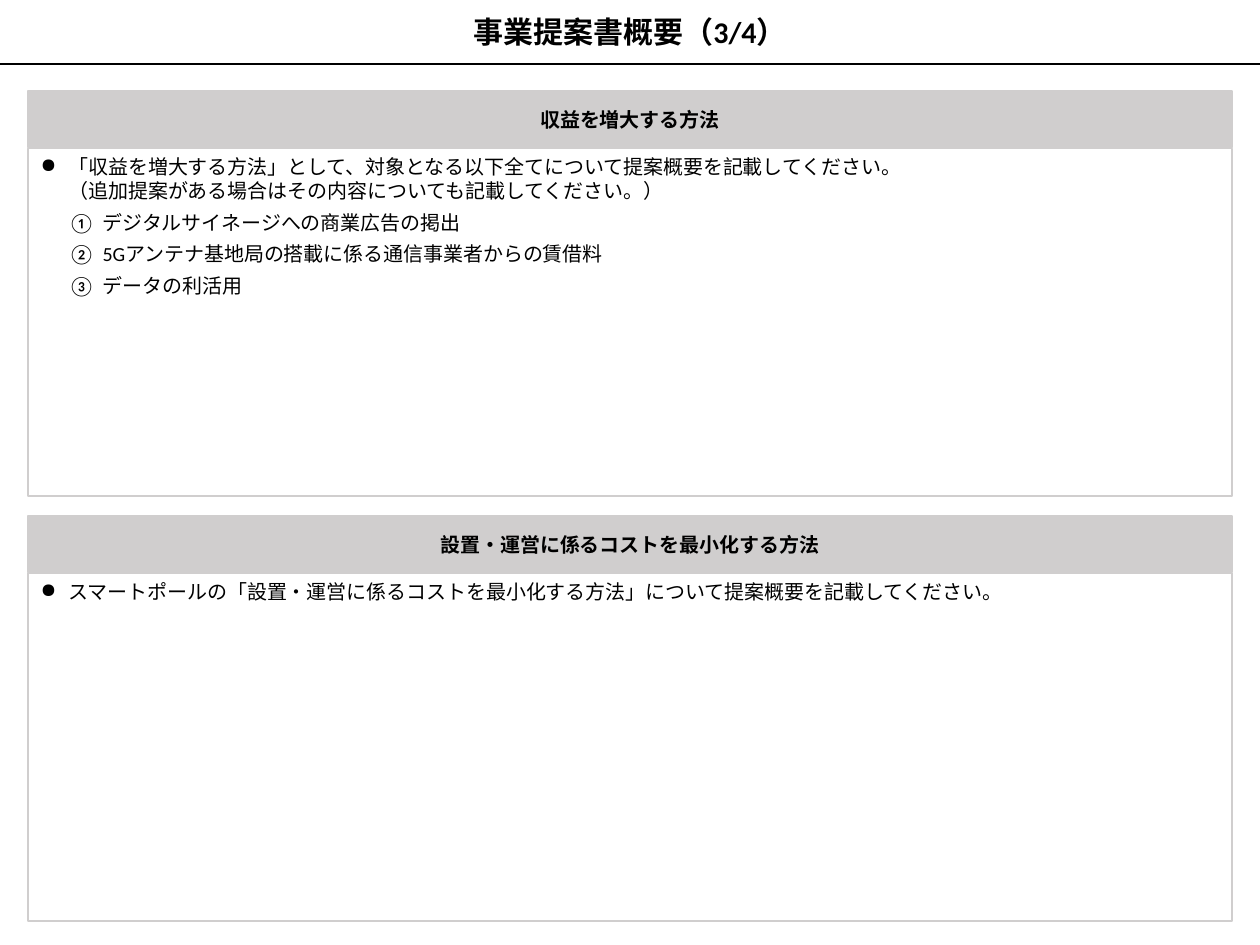
"""Build the proposal summary slide: a ruled title above two headed answer panels."""
from copy import deepcopy
from dataclasses import dataclass

from lxml import etree
from pptx import Presentation
from pptx import util as u
from pptx.dml.color import RGBColor
from pptx.enum import shapes, text
from pptx.oxml.ns import qn


@dataclass(frozen=True)
class Theme:
    ink: RGBColor = RGBColor(0, 0, 0)
    paper: RGBColor = RGBColor(255, 255, 255)
    band: RGBColor = RGBColor(0xD0, 0xCE, 0xCE)
    face: str = "Calibri"
    title_size: int = 24
    body_size: int = 16
    rule: float = 1.5


theme = Theme()


def write(paragraph, wording, size, bold=False):
    paragraph.text = wording
    for run in paragraph.runs:
        look = {"name": theme.face, "size": u.Pt(size), "bold": bold}
        for key, value in look.items():
            setattr(run.font, key, value)
        run.font.color.rgb = theme.ink
        properties = run.font._element
        etree.SubElement(properties, qn("a:ea"), typeface=theme.face)
    for line_break in paragraph._p.findall(qn("a:br")):
        line_break.insert(0, deepcopy(properties))


def dress(box, fill, edge, width, **frame_format):
    box.fill.solid()
    box.fill.fore_color.rgb = fill
    box.line.color.rgb = edge
    box.line.width = u.Pt(width)
    for key, value in frame_format.items():
        setattr(box.text_frame, key, value)


deck = Presentation()
deck.slide_width, deck.slide_height = u.Inches(14), u.Inches(10.5)
slide = deck.slides.add_slide(deck.slide_layouts[5])

title_height = u.Inches(0.71)
side = u.Inches(0.31)
panel_width = deck.slide_width - 2 * side
first_top, panel_pitch = u.Inches(1.01), u.Inches(4.72)
header_height, body_offset, body_height = u.Inches(0.63), u.Inches(0.64), u.Inches(3.86)
insets = {"margin_left": u.Inches(0.14), "margin_right": u.Inches(0.14),
          "margin_top": u.Inches(0.07), "margin_bottom": u.Inches(0.07)}

title = slide.shapes.title
place = {"left": 0, "top": 0, "width": deck.slide_width, "height": title_height}
for key, value in place.items():
    setattr(title, key, value)
dress(title, theme.paper, theme.paper, 1, auto_size=text.MSO_AUTO_SIZE.NONE,
      vertical_anchor=text.MSO_ANCHOR.MIDDLE, word_wrap=True)
heading = title.text_frame.paragraphs[0]
heading.alignment = text.PP_ALIGN.CENTER
write(heading, "事業提案書概要（3/4）", theme.title_size, bold=True)

title_rule = slide.shapes.add_connector(
    shapes.MSO_CONNECTOR.STRAIGHT, 0, title_height, deck.slide_width, title_height)
title_rule.line.color.rgb = theme.ink
title_rule.line.width = u.Pt(theme.rule)
etree.SubElement(title_rule._element.spPr, qn("a:effectLst"))

levels = [
    (0.31, -0.31, "a:buChar", {"char": "●"}),
    (0.69, -0.38, "a:buAutoNum", {"type": "circleNumDbPlain"}),
]
panels = [
    ("収益を増大する方法", [
        (0, "「収益を増大する方法」として、対象となる以下全てについて提案概要を記載してください。\n"
            "（追加提案がある場合はその内容についても記載してください。）"),
        (1, "デジタルサイネージへの商業広告の掲出"),
        (1, "5Gアンテナ基地局の搭載に係る通信事業者からの賃借料"),
        (1, "データの利活用"),
    ]),
    ("設置・運営に係るコストを最小化する方法", [
        (0, "スマートポールの「設置・運営に係るコストを最小化する方法」について提案概要を記載してください。"),
    ]),
]

for row, (panel_title, guidance) in enumerate(panels):
    top = first_top + row * panel_pitch
    header = slide.shapes.add_shape(
        shapes.MSO_SHAPE.RECTANGLE, side, top, panel_width, header_height)
    header.shadow.inherit = False
    dress(header, theme.band, theme.band, theme.rule, word_wrap=False,
          vertical_anchor=text.MSO_ANCHOR.MIDDLE, **insets)
    caption = header.text_frame.paragraphs[0]
    caption.alignment = text.PP_ALIGN.CENTER
    write(caption, panel_title, theme.body_size, bold=True)

    answer = slide.shapes.add_shape(
        shapes.MSO_SHAPE.RECTANGLE, side, top + body_offset, panel_width, body_height)
    answer.shadow.inherit = False
    dress(answer, theme.paper, theme.band, theme.rule, word_wrap=True,
          vertical_anchor=text.MSO_ANCHOR.TOP, **insets)
    for order, (level, wording) in enumerate(guidance):
        frame = answer.text_frame
        item = frame.add_paragraph() if order else frame.paragraphs[0]
        item.alignment = text.PP_ALIGN.LEFT
        item.level = level
        if order:
            item.space_before = u.Pt(6)
        margin, indent, bullet, bullet_format = levels[level]
        layout = item._p.get_or_add_pPr()
        layout.set("marL", str(u.Inches(margin)))
        layout.set("indent", str(u.Inches(indent)))
        etree.SubElement(layout, qn(bullet), **bullet_format)
        write(item, wording, theme.body_size)

deck.save("out.pptx")
